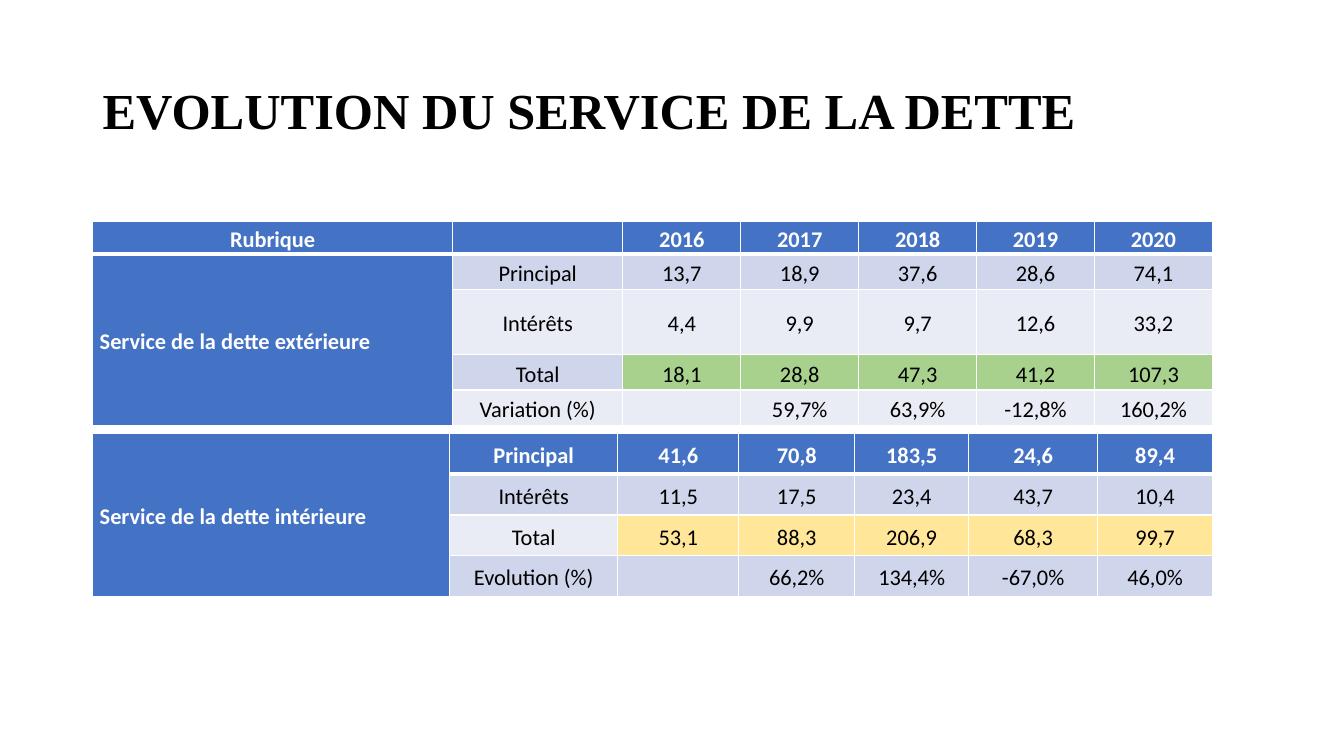
from dataclasses import dataclass

from lxml.etree import SubElement
from pptx import Presentation
from pptx.dml.color import RGBColor
from pptx.enum.text import MSO_ANCHOR, PP_ALIGN
from pptx.oxml.ns import qn
from pptx.util import Pt


@dataclass(frozen=True)
class Theme:
    blue: str = "4472C4"
    band_dark: str = "CFD5EA"
    band_light: str = "E9EBF5"
    green: str = "A9D18E"
    yellow: str = "FFE699"
    white: str = "FFFFFF"
    black: str = "000000"
    title_font: str = "Times New Roman"
    table_font: str = "Calibri"
    title_size: int = 36
    table_size: int = 16


theme = Theme()


def write(frame, text, *, font, size, color, bold=False, align=PP_ALIGN.LEFT,
          line_spacing=1.0, space_after=0):
    para = frame.paragraphs[0]
    para.alignment = align
    para.line_spacing = line_spacing
    para.space_after = Pt(space_after)
    span = para.add_run()
    span.text = text
    span.font.name = font
    span.font.size = Pt(size)
    span.font.bold = bold
    span.font.color.rgb = RGBColor.from_string(color)


def set_borders(cell, widths):
    properties = cell._tc.get_or_add_tcPr()
    for side in ("lnL", "lnR", "lnT", "lnB"):
        line = SubElement(properties, qn(f"a:{side}"), w=str(Pt(widths.get(side, 1))))
        fill = SubElement(line, qn("a:solidFill"))
        SubElement(fill, qn("a:srgbClr"), val=theme.white)


deck = Presentation()
deck.slide_width, deck.slide_height = Pt(960), Pt(540)
page = deck.slides.add_slide(deck.slide_layouts[6])

# Title
title_box = page.shapes.add_textbox(Pt(66.24), Pt(28.8), Pt(828), Pt(104.4))
title_box.text_frame.word_wrap = True
title_box.text_frame.vertical_anchor = MSO_ANCHOR.MIDDLE
write(title_box.text_frame, "EVOLUTION DU SERVICE DE LA DETTE", font=theme.title_font,
      size=theme.title_size, color=theme.black, bold=True, line_spacing=0.9)

# Debt tables: the first column is merged from row "merge_from" to the bottom
debt_tables = [
    dict(
        top=158.4, merge_from=1, total_color=theme.green,
        widths=[257.04, 121.68] + [84.24] * 5,
        heights=[23.2, 25.2, 46.6, 25.2, 25.2],
        rows=[
            ["Rubrique", "", "2016", "2017", "2018", "2019", "2020"],
            ["Service de la dette extérieure", "Principal", "13,7", "18,9", "37,6", "28,6", "74,1"],
            ["", "Intérêts", "4,4", "9,9", "9,7", "12,6", "33,2"],
            ["", "Total", "18,1", "28,8", "47,3", "41,2", "107,3"],
            ["", "Variation (%)", "", "59,7%", "63,9%", "-12,8%", "160,2%"],
        ],
    ),
    dict(
        top=309.6, merge_from=0, total_color=theme.yellow,
        widths=[254.88, 120.24, 86.4, 82.8, 81.36, 92.16, 82.08],
        heights=[29.16] * 4,
        rows=[
            ["Service de la dette intérieure", "Principal", "41,6", "70,8", "183,5", "24,6", "89,4"],
            ["", "Intérêts", "11,5", "17,5", "23,4", "43,7", "10,4"],
            ["", "Total", "53,1", "88,3", "206,9", "68,3", "99,7"],
            ["", "Evolution (%)", "", "66,2%", "134,4%", "-67,0%", "46,0%"],
        ],
    ),
]

for debt in debt_tables:
    rows, widths, heights = debt["rows"], debt["widths"], debt["heights"]
    table = page.shapes.add_table(
        len(rows), len(widths), Pt(66.24), Pt(debt["top"]),
        Pt(sum(widths)), Pt(sum(heights))).table
    for column, width in zip(table.columns, widths):
        column.width = Pt(width)
    for row, height in zip(table.rows, heights):
        row.height = Pt(height)
    table.cell(debt["merge_from"], 0).merge(table.cell(len(rows) - 1, 0))

    for row_index, values in enumerate(rows):
        for column_index, text in enumerate(values):
            cell = table.cell(row_index, column_index)
            cell.margin_left = cell.margin_right = Pt(5)
            cell.margin_top = cell.margin_bottom = 0
            cell.vertical_anchor = MSO_ANCHOR.MIDDLE

            # A thick rule separates the heading row from the body
            thick = {0: {"lnB": 3}, 1: {"lnT": 3}}.get(row_index, {})
            in_merge = column_index == 0 and row_index >= debt["merge_from"]
            set_borders(cell, {} if in_merge else thick)

            heading = row_index == 0 or column_index == 0
            if heading:
                color = theme.blue
            elif values[1] == "Total" and column_index > 1:
                color = debt["total_color"]
            else:
                color = theme.band_dark if row_index % 2 else theme.band_light
            cell.fill.solid()
            cell.fill.fore_color.rgb = RGBColor.from_string(color)

            if text:
                write(cell.text_frame, text, font=theme.table_font, size=theme.table_size,
                      color=theme.white if heading else theme.black, bold=heading,
                      align=PP_ALIGN.LEFT if in_merge else PP_ALIGN.CENTER,
                      line_spacing=1.15, space_after=10)

deck.save("out.pptx")
